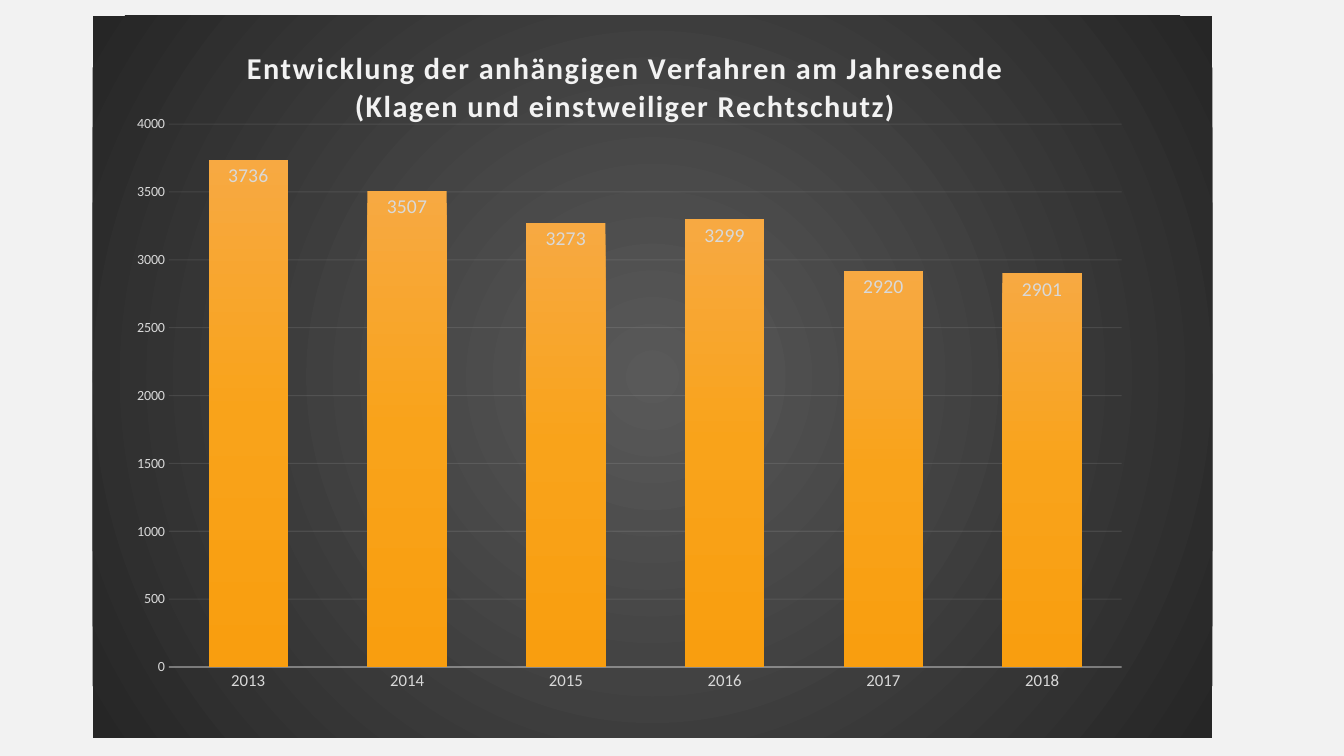
from dataclasses import dataclass

from lxml.etree import SubElement as Sub
from pptx import Presentation
from pptx.chart.data import CategoryChartData
from pptx.dml.color import RGBColor as RGB
from pptx.enum.chart import XL_CHART_TYPE as CT, XL_LABEL_POSITION as LP, XL_TICK_MARK as TM
from pptx.oxml import parse_xml
from pptx.oxml.ns import nsdecls, qn
from pptx.util import Inches, Pt


@dataclass(frozen=True)
class Theme:
    """Colours, font and type sizes of the slide."""
    font: str = "Calibri"
    light: str = "F2F2F2"
    muted: str = "D9D9D9"
    panel: tuple = ((0, "595959"), (100, "262626"))
    bar: tuple = ((0, "F7A942"), (50, "F9A31A"), (100, "F99E0F"))
    title_pt: float = 21.6
    label_pt: float = 14
    category_pt: float = 12
    value_pt: float = 10


class ChartSlide:
    """Holds the theme and the current slide, with a method per element."""

    def __init__(self, prs, theme):
        """Add a blank slide with a plain background."""
        self.prs, self.theme = prs, theme
        self.slide = prs.slides.add_slide(prs.slide_layouts[6])
        fill = self.slide.background.fill
        fill.solid()
        fill.fore_color.rgb = RGB.from_string(theme.light)

    def style(self, font, size, color, **extra):
        """Apply the theme font with the given format values."""
        for name, value in dict(name=self.theme.font, size=Pt(size), **extra).items():
            setattr(font, name, value)
        font.color.rgb = RGB.from_string(color)

    def gradient(self, stops, direction):
        """Return a gradient fill element."""
        grad = parse_xml(f'<a:gradFill {nsdecls("a")} rotWithShape="1"><a:gsLst/>{direction}</a:gradFill>')
        for pos, color in stops:
            gs = Sub(grad[0], qn("a:gs"), pos=str(pos * 1000))
            Sub(gs, qn("a:srgbClr"), val=color)
        return grad

    def layout(self, parent, target="", **place):
        """Return a manual layout that replaces the one in parent."""
        for old in parent.findall(qn("c:layout")):
            parent.remove(old)
        layout = parse_xml(f'<c:layout {nsdecls("c")}><c:manualLayout/></c:layout>')
        values = {"layoutTarget": target} if target else {}
        values.update(xMode="edge", yMode="edge", **place)
        for name, value in values.items():
            Sub(layout[0], qn(f"c:{name}"), val=str(value))
        return layout

    def line(self, line, width, alpha):
        """Draw a translucent light line."""
        line.width = Pt(width)
        line.color.rgb = RGB.from_string(self.theme.light)
        color = next(line.fill._xPr.iter(qn("a:srgbClr")))
        Sub(color, qn("a:alpha"), val=str(alpha * 1000))

    def chart(self, x, y, w, h, categories, values):
        """Add a column chart placed by shares of the slide size."""
        data = CategoryChartData()
        data.categories = categories
        data.add_series("Series 1", values)
        sw, sh = self.prs.slide_width, self.prs.slide_height
        box = [int(v) for v in (x * sw, y * sh, w * sw, h * sh)]
        chart = self.slide.shapes.add_chart(CT.COLUMN_CLUSTERED, *box, data).chart
        chart.has_legend = False
        self.style(chart.font, self.theme.value_pt, self.theme.muted)
        panel = parse_xml(f'<c:spPr {nsdecls("c", "a")}><a:ln><a:noFill/></a:ln></c:spPr>')
        panel.insert(0, self.gradient(self.theme.panel, '<a:path path="circle"><a:fillToRect '
                                      'l="50000" t="50000" r="50000" b="50000"/></a:path>'))
        root = chart._chartSpace
        root.find(qn("c:chart")).addnext(panel)
        area = next(root.iter(qn("c:plotArea")))
        area.insert(0, self.layout(area, "inner", x=0.068, y=0.15, w=0.851, h=0.752))
        return chart

    def title(self, chart, lines, x, y):
        """Write the chart title, one paragraph a line."""
        tf = chart.chart_title.text_frame
        for i, text in enumerate(lines):
            p = tf.add_paragraph() if i else tf.paragraphs[0]
            r = p.add_run()
            r.text = text
            self.style(r.font, self.theme.title_pt, self.theme.light, bold=True)
            r.font._element.set("spc", "100")
        title = chart.chart_title._element
        title.find(qn("c:tx")).addnext(self.layout(title, x=x, y=y))

    def axes(self, chart, top, step):
        """Format both axes and the gridlines."""
        t, cat, val = self.theme, chart.category_axis, chart.value_axis
        for axis, size in ((cat, t.category_pt), (val, t.value_pt)):
            axis.major_tick_mark = axis.minor_tick_mark = TM.NONE
            self.style(axis.tick_labels.font, size, t.muted)
        for name, value in dict(minimum_scale=0, maximum_scale=top, major_unit=step,
                                has_major_gridlines=True).items():
            setattr(val, name, value)
        val.format.line.fill.background()
        self.line(cat.format.line, 1, 54)
        self.line(val.major_gridlines.format.line, 0.75, 10)

    def bars(self, chart):
        """Format the columns and their value labels."""
        plot = chart.plots[0]
        for name, value in dict(gap_width=100, overlap=-24, vary_by_categories=False,
                                has_data_labels=True).items():
            setattr(plot, name, value)
        sp = plot.series[0]._element.get_or_add_spPr()
        sp.insert(0, self.gradient(self.theme.bar, '<a:lin ang="5400000" scaled="0"/>'))
        labels = plot.data_labels
        labels.show_value, labels.position = True, LP.INSIDE_END
        self.style(labels.font, self.theme.label_pt, self.theme.muted)


def main():
    """Build and save the slide."""
    prs = Presentation()
    prs.slide_width, prs.slide_height = Inches(13.33), Inches(7.5)
    s = ChartSlide(prs, Theme())
    years = [str(year) for year in range(2013, 2019)]
    chart = s.chart(0.069, 0.021, 0.833, 0.955, years, (3736, 3507, 3273, 3299, 2920, 2901))
    s.title(chart, ("Entwicklung der anhängigen Verfahren am Jahresende",
                    "(Klagen und einstweiliger Rechtschutz)"), 0.135, 0.04)
    s.axes(chart, 4000, 500)
    s.bars(chart)
    prs.save("out.pptx")


if __name__ == "__main__":
    main()
